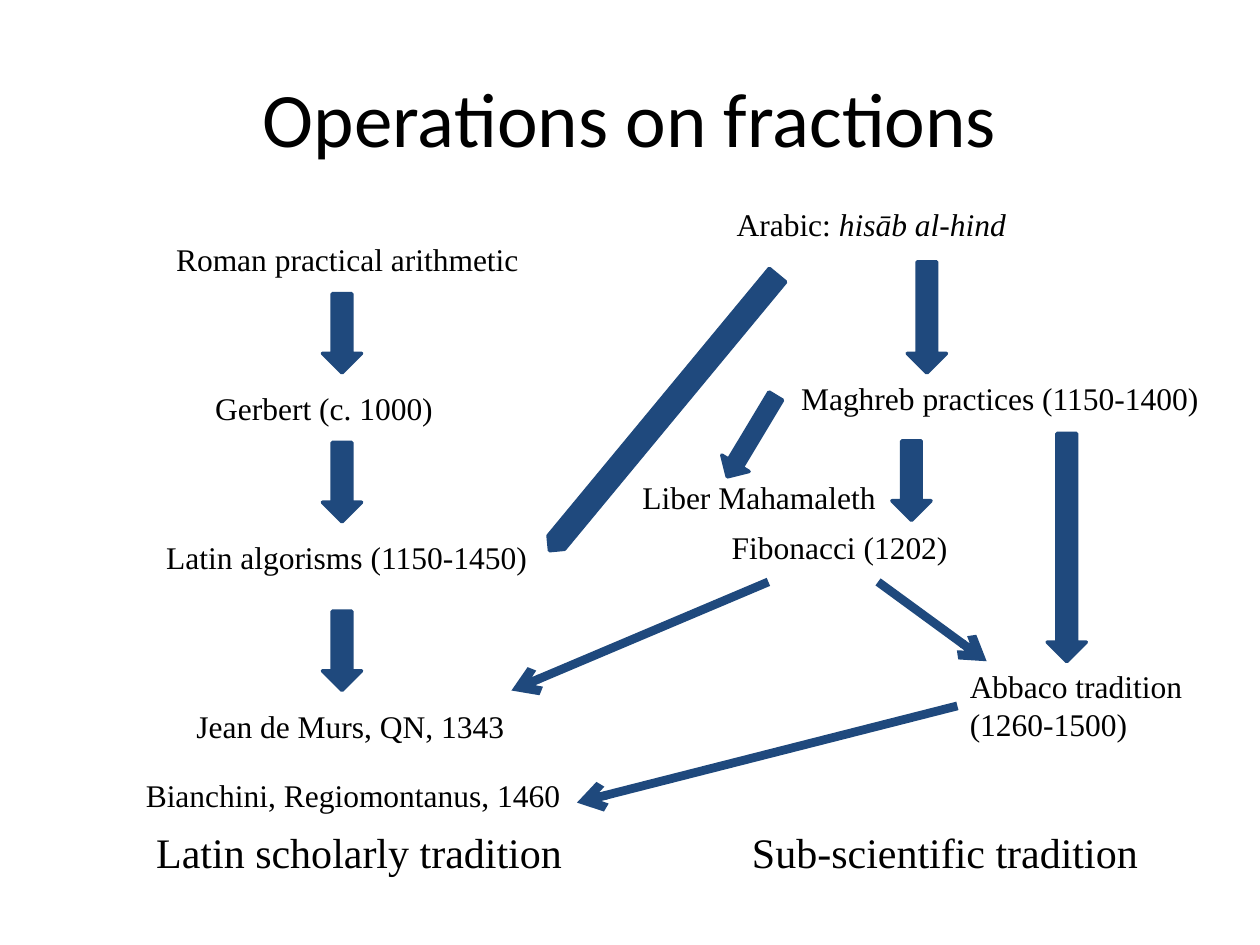
from dataclasses import dataclass

from lxml.etree import SubElement as Sub
from pptx import Presentation
from pptx.dml.color import RGBColor as Rgb
from pptx.enum.shapes import MSO_CONNECTOR as Link, MSO_SHAPE as Shape
from pptx.enum.text import MSO_ANCHOR as Anchor, MSO_AUTO_SIZE as Fit, PP_ALIGN as Align
from pptx.oxml.ns import qn
from pptx.util import Cm, Pt


@dataclass(frozen=True)
class Theme:
    """Hold the colours, fonts and type sizes of the slide."""
    ink: Rgb = Rgb(0, 0, 0)
    navy: Rgb = Rgb(0x1F, 0x49, 0x7D)
    head: str = "Calibri"
    body: str = "Times New Roman"
    large: int = 44
    mid: int = 24
    small: int = 18


THEME = Theme()

LABELS = [
    ("Roman practical arithmetic", 3.3, 4.72, 7.6),
    ("Gerbert (c. 1000)", 4.09, 7.72, 5.41),
    ("Latin algorisms (1150-1450)", 3.1, 10.72, 8),
    ("Jean de Murs, QN, 1343", 3.71, 14.12, 8),
    ("Bianchini, Regiomontanus, 1460", 2.69, 15.52, 9.2),
    ("Maghreb practices (1150-1400)", 15.9, 7.52, 9),
    ("Liber Mahamaleth", 12.7, 9.52, 5.28),
    ("Fibonacci (1202)", 14.5, 10.52, 5.41),
]

BLOCKS = [
    (6.5, 5.92, 1.6),
    (6.5, 8.92, 1.6),
    (6.5, 12.32, 1.6),
    (18.29, 5.28, 2.24),
    (17.98, 8.89, 1.6),
    (21.11, 8.74, 4.6),
]


def style(para, size, name=THEME.body):
    """Give a paragraph its font, size and colour."""
    font = para.font
    font.name, font.size = name, Pt(size)
    font.color.rgb = THEME.ink


def title(slide, text):
    """Fill and place the title placeholder."""
    box = slide.shapes.title
    box.left, box.top, box.width, box.height = Cm(1.27), Cm(0.76), Cm(22.86), Cm(3.18)
    frame = box.text_frame
    frame.text = text
    frame.vertical_anchor = Anchor.MIDDLE
    para = frame.paragraphs[0]
    para.alignment = Align.CENTER
    style(para, THEME.large, THEME.head)


def label(slide, text, x, y, w, h=1.02, size=THEME.small, slant=""):
    """Add a wrapped text box, with an optional italic ending."""
    box = slide.shapes.add_textbox(Cm(x), Cm(y), Cm(w), Cm(h))
    frame = box.text_frame
    frame.word_wrap = True
    frame.auto_size = Fit.SHAPE_TO_FIT_TEXT
    para = frame.paragraphs[0]
    style(para, size)
    para.add_run().text = text
    if slant:
        run = para.add_run()
        run.text = slant
        run.font.italic = True
    return box


def block(slide, x, y, h, w=0.79, turn=0, stem=0.5):
    """Add a solid down arrow, turned by some degrees."""
    arrow = slide.shapes.add_shape(Shape.DOWN_ARROW, Cm(x), Cm(y), Cm(w), Cm(h))
    arrow.adjustments[0] = stem
    arrow.rotation = turn
    arrow.shadow.inherit = False
    arrow.fill.solid()
    arrow.fill.fore_color.rgb = THEME.navy
    arrow.line.color.rgb = THEME.navy
    arrow.line.width = Pt(2)


def line(slide, x1, y1, x2, y2):
    """Add a thick line with an open arrowhead at its end."""
    link = slide.shapes.add_connector(Link.STRAIGHT, Cm(x1), Cm(y1), Cm(x2), Cm(y2))
    link.line.color.rgb = THEME.navy
    link.line.width = Pt(5)
    Sub(link.line._get_or_add_ln(), qn("a:tailEnd"), type="arrow")
    Sub(link._element.spPr, qn("a:effectLst"))
    return link


def main():
    """Build the slide and save it."""
    deck = Presentation()
    deck.slide_width, deck.slide_height = Cm(25.4), Cm(19.05)
    slide = deck.slides.add_slide(deck.slide_layouts[5])
    title(slide, "Operations on fractions")

    for item in LABELS:
        label(slide, *item)
    label(slide, "Arabic: ", 14.6, 4.01, 7.6, slant="hisāb al-hind")
    abbaco = label(slide, "Abbaco tradition (1260-1500)", 19.3, 13.33, 5.41, 1.8)
    for text, x in (("Latin scholarly tradition", 2.9), ("Sub-scientific tradition", 14.91)):
        label(slide, text, x, 16.54, 9.4, 1.27, THEME.mid)

    for item in BLOCKS:
        block(slide, *item)
    block(slide, 13.16, 4.72, 7.21, w=0.43, turn=39.6, stem=1)
    block(slide, 14.83, 7.85, 1.9, w=0.64, turn=31)

    line(slide, 17.7, 11.73, 19.89, 13.33)
    line(slide, 15.49, 11.73, 10.31, 13.92)
    line(slide, 19.3, 14.23, 11.63, 16.18).begin_connect(abbaco, 1)

    deck.save("out.pptx")


if __name__ == "__main__":
    main()
